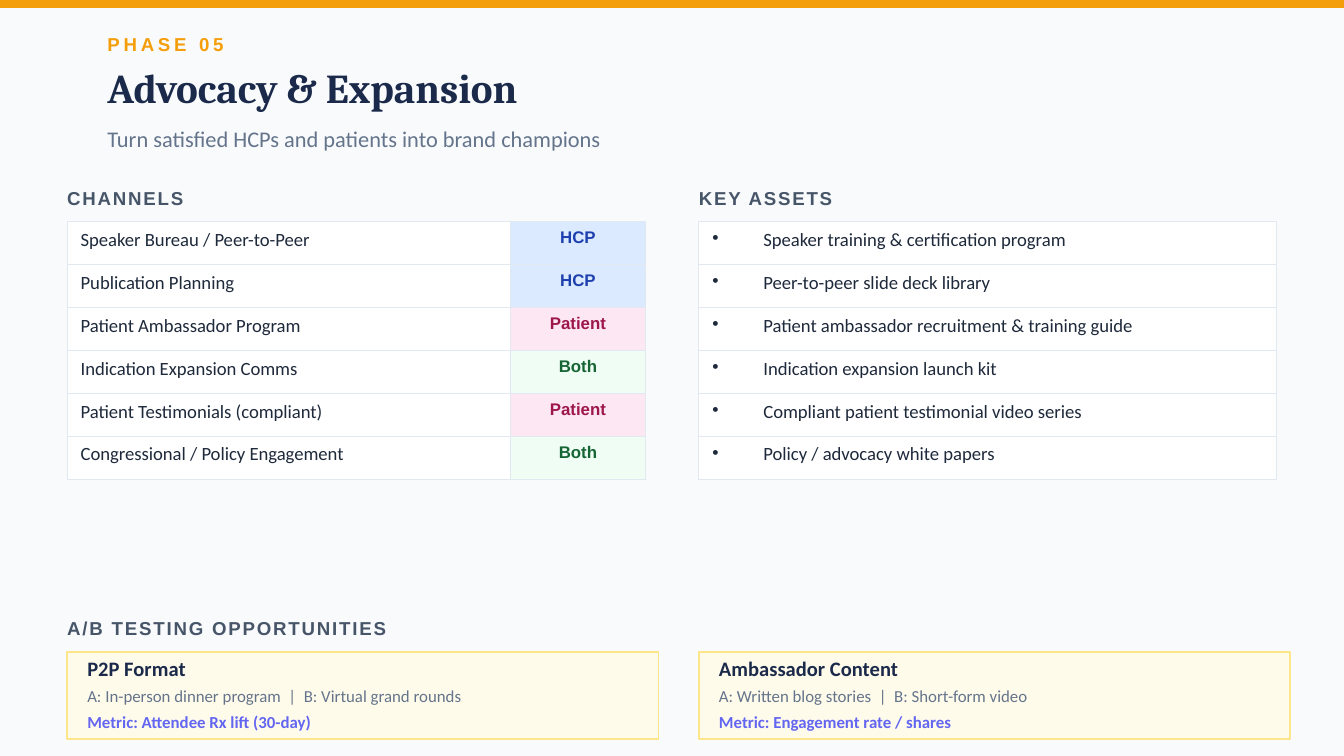
from lxml.etree import SubElement
from pptx import Presentation
from pptx.dml.color import RGBColor
from pptx.enum.shapes import MSO_SHAPE
from pptx.enum.text import MSO_ANCHOR, PP_ALIGN
from pptx.oxml.ns import qn
from pptx.util import Inches, Pt

W, H = 10, 5.625
LEFT, RIGHT = 0.5, 5.2
ROW_H = 0.32
COLORS = {
    "bg": "F8FAFC", "accent": "F59E0B", "navy": "1B2A4A", "muted": "64748B",
    "heading": "475569", "body": "1E293B", "border": "E2E8F0", "white": "FFFFFF",
    "card": "FFFBEB", "card_line": "FDE68A", "metric": "6366F1",
    "HCP": "1E40AF", "HCP_bg": "DBEAFE",
    "Patient": "9D174D", "Patient_bg": "FCE7F3",
    "Both": "166534", "Both_bg": "F0FDF4",
}
CHANNELS = [
    ("Speaker Bureau / Peer-to-Peer", "HCP"),
    ("Publication Planning", "HCP"),
    ("Patient Ambassador Program", "Patient"),
    ("Indication Expansion Comms", "Both"),
    ("Patient Testimonials (compliant)", "Patient"),
    ("Congressional / Policy Engagement", "Both"),
]
ASSETS = [
    "Speaker training & certification program",
    "Peer-to-peer slide deck library",
    "Patient ambassador recruitment & training guide",
    "Indication expansion launch kit",
    "Compliant patient testimonial video series",
    "Policy / advocacy white papers",
]
TESTS = [
    ("P2P Format", "A: In-person dinner program  |  B: Virtual grand rounds",
     "Metric: Attendee Rx lift (30-day)"),
    ("Ambassador Content", "A: Written blog stories  |  B: Short-form video",
     "Metric: Engagement rate / shares"),
]


def rgb(name):
    return RGBColor.from_string(COLORS[name])


def write(tf, text, size=10, font="Calibri", color="body", bold=False,
          spacing=0, align=PP_ALIGN.LEFT, bullet=False):
    p = tf.paragraphs[0]
    p.alignment = align
    if bullet:
        pPr = p._p.get_or_add_pPr()
        pPr.set("marL", str(Inches(0.38)))
        pPr.set("indent", str(-Inches(0.38)))
        SubElement(pPr, qn("a:buChar")).set("char", "•")
    r = p.add_run()
    r.text = text
    r.font.size, r.font.name, r.font.bold = Pt(size), font, bold
    r.font.color.rgb = rgb(color)
    if spacing:
        r._r.get_or_add_rPr().set("spc", str(spacing * 100))


def add_text(s, box, text, **fmt):
    tf = s.shapes.add_textbox(*map(Inches, box)).text_frame
    tf.margin_left = tf.margin_right = tf.margin_top = tf.margin_bottom = 0
    tf.word_wrap = True
    tf.vertical_anchor = MSO_ANCHOR.MIDDLE
    write(tf, text, **fmt)


def add_rect(s, box, fill, line=None):
    sp = s.shapes.add_shape(MSO_SHAPE.RECTANGLE, *map(Inches, box))
    sp.shadow.inherit = False
    sp.fill.solid()
    sp.fill.fore_color.rgb = rgb(fill)
    if line:
        sp.line.color.rgb = rgb(line)
        sp.line.width = Pt(1)
    else:
        sp.line.fill.background()


def fill_cell(cell, text, fill="white", **fmt):
    tcPr = cell._tc.get_or_add_tcPr()
    for side in ("lnL", "lnR", "lnT", "lnB"):
        ln = SubElement(tcPr, qn(f"a:{side}"), w=str(Pt(0.5)))
        solid = SubElement(ln, qn("a:solidFill"))
        SubElement(solid, qn("a:srgbClr"), val=COLORS["border"])
    cell.fill.solid()
    cell.fill.fore_color.rgb = rgb(fill)
    write(cell.text_frame, text, **fmt)


def add_grid(s, x, y, rows, widths):
    box = (x, y, sum(widths), ROW_H * rows)
    table = s.shapes.add_table(rows, len(widths), *map(Inches, box)).table
    table.first_row = table.horz_banding = False
    for col, width in zip(table.columns, widths):
        col.width = Inches(width)
    for row in table.rows:
        row.height = Inches(ROW_H)
    return table


def add_heading(s, x, y, w, text):
    add_text(s, (x, y, w, 0.25), text, font="Arial", color="heading", bold=True, spacing=1)


def add_header(s, x, y):
    add_rect(s, (0, 0, W, 0.06), "accent")
    add_text(s, (x, y, 2, 0.25), "PHASE 05", font="Arial", color="accent", bold=True, spacing=2)
    add_text(s, (x, y + 0.22, 5, 0.45), "Advocacy & Expansion",
             size=22, font="Cambria", color="navy", bold=True)
    add_text(s, (x, y + 0.68, 8, 0.3), "Turn satisfied HCPs and patients into brand champions",
             size=12, color="muted")


def add_channels(s, x, y, w):
    add_heading(s, x, y, 2, "CHANNELS")
    table = add_grid(s, x, y + 0.3, len(CHANNELS), [w - 1, 1])
    for i, (channel, audience) in enumerate(CHANNELS):
        fill_cell(table.cell(i, 0), channel)
        fill_cell(table.cell(i, 1), audience, fill=f"{audience}_bg", size=9, font="Arial",
                  color=audience, bold=True, align=PP_ALIGN.CENTER)


def add_assets(s, x, y, w):
    add_heading(s, x, y, 2, "KEY ASSETS")
    table = add_grid(s, x, y + 0.3, len(ASSETS), [w])
    for i, asset in enumerate(ASSETS):
        fill_cell(table.cell(i, 0), asset, bullet=True)


def add_test_card(s, x, y, w, h, title, variants, metric):
    add_rect(s, (x, y, w, h), "card", "card_line")
    tx, tw = x + 0.15, w - 0.3
    add_text(s, (tx, y, tw, 0.25), title, size=11, color="navy", bold=True)
    add_text(s, (tx, y + 0.23, tw, 0.2), variants, size=9, color="muted")
    add_text(s, (tx, y + 0.42, tw, 0.2), metric, size=9, color="metric", bold=True)


def add_tests(s, y):
    add_heading(s, LEFT, y, 4, "A/B TESTING OPPORTUNITIES")
    for x, test in zip((LEFT, RIGHT), TESTS):
        add_test_card(s, x, y + 0.3, 4.4, 0.65, *test)


def main():
    prs = Presentation()
    prs.slide_width, prs.slide_height = Inches(W), Inches(H)
    s = prs.slides.add_slide(prs.slide_layouts[6])
    s.background.fill.solid()
    s.background.fill.fore_color.rgb = rgb("bg")
    add_header(s, 0.8, 0.2)
    add_channels(s, LEFT, 1.35, 4.3)
    add_assets(s, RIGHT, 1.35, 4.3)
    add_tests(s, 4.55)
    prs.save("out.pptx")


if __name__ == "__main__":
    main()
